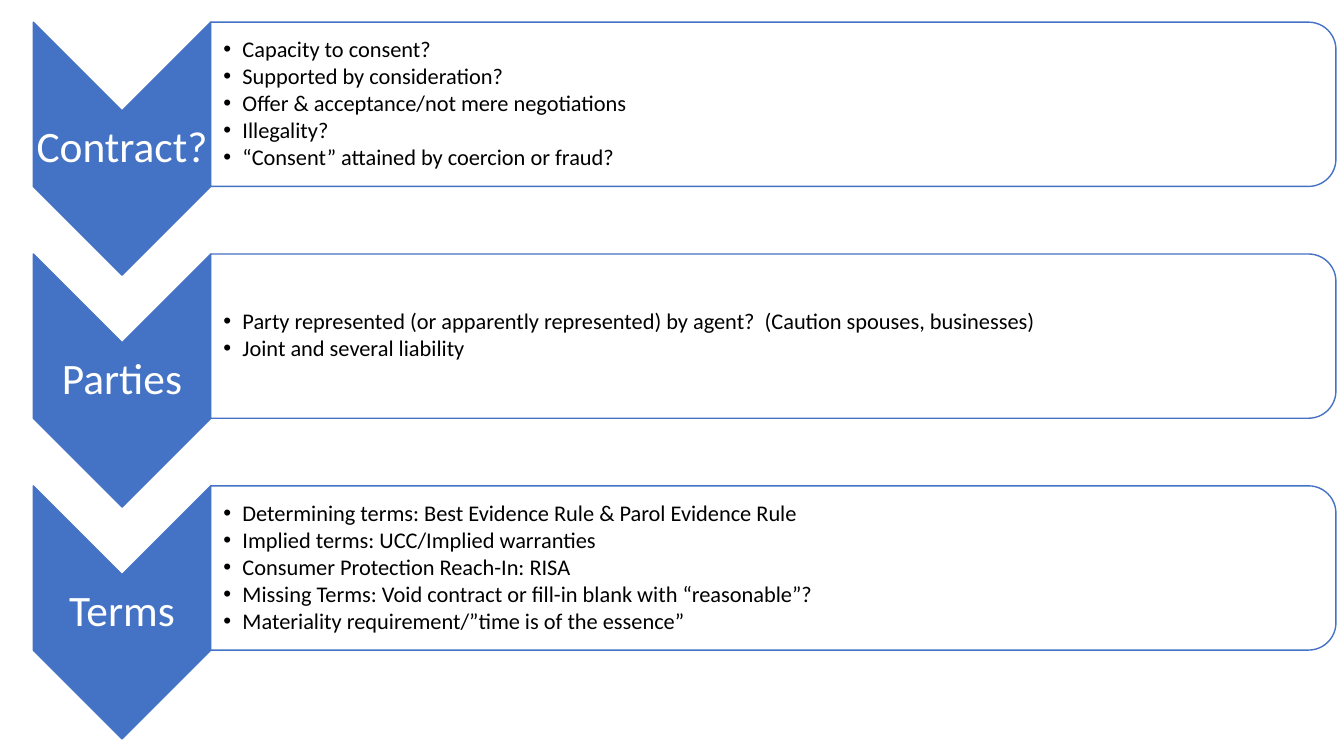
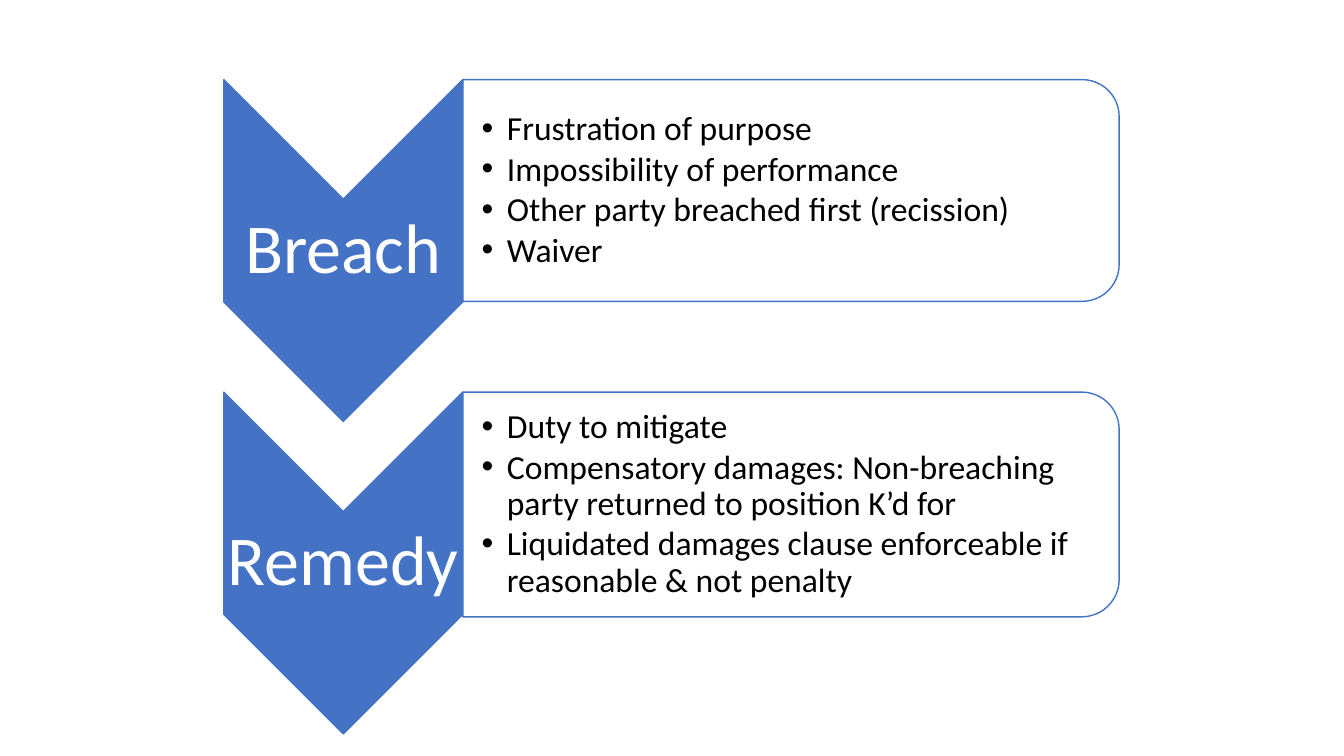
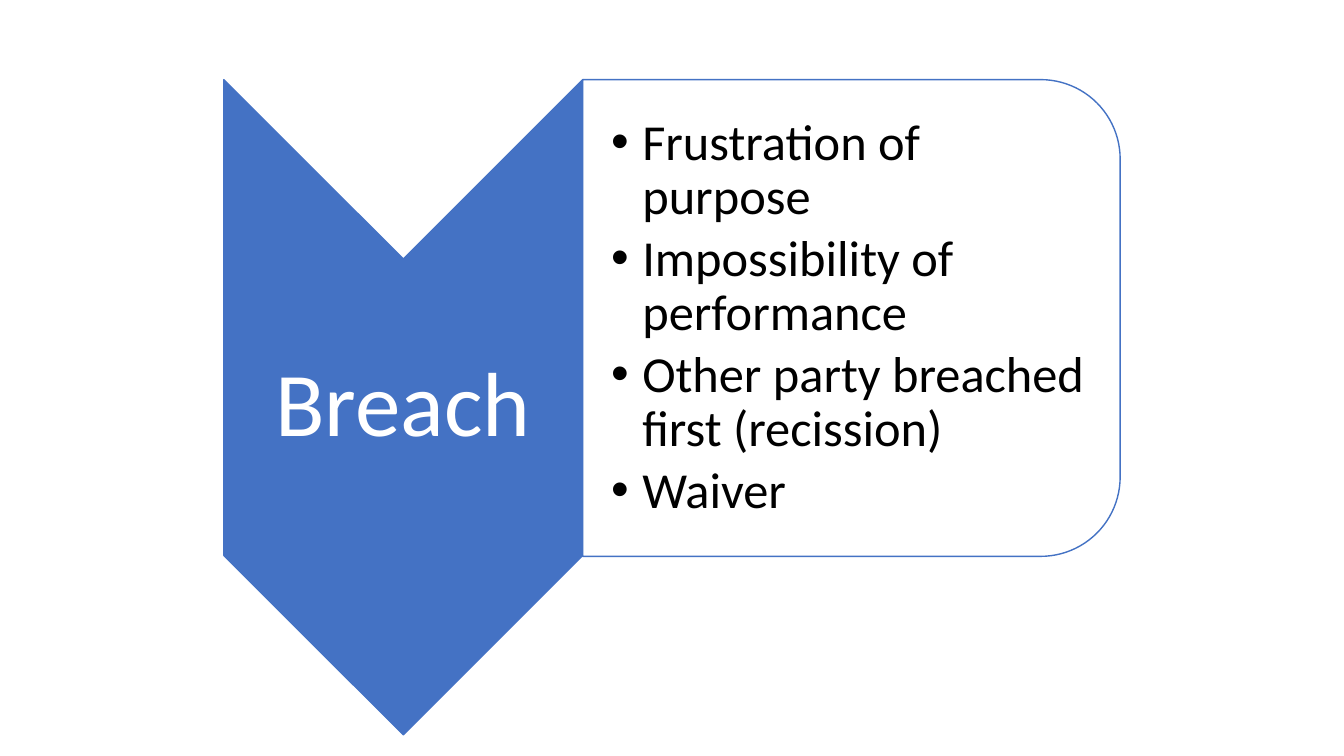
from dataclasses import dataclass

from lxml import etree
from pptx import Presentation
from pptx import util as u
from pptx.dml.color import RGBColor
from pptx.enum import shapes, text
from pptx.oxml.ns import qn

PX = 9144  # EMU in one px, 100 px to the inch


# Theme
@dataclass(frozen=True)
class Theme:
    font: str = "Calibri"
    accent: str = "4472C4"
    panel: str = "FFFFFF"
    panel_alpha: int = 90
    label: str = "FFFFFF"
    body: str = "000000"
    line: float = 1
    leading: float = 0.9
    para_gap: float = 0.13  # share of the type size


THEME = Theme()


# Content model
@dataclass(frozen=True)
class Box:
    left: float
    top: float
    width: float
    height: float


@dataclass(frozen=True)
class Step:
    label: str
    points: tuple[str, ...]
    panel_height: int


@dataclass(frozen=True)
class ChevronList:
    layout: int  # template layout with enough body placeholders
    chevron: Box  # the first chevron
    pitch: int
    panel_width: int
    label_size: int
    list_size: int
    indent: int
    steps: tuple[Step, ...]


BREACH = ("Frustration of purpose", "Impossibility of performance",
          "Other party breached first (recission)", "Waiver")

SLIDES = (
    ChevronList(4, Box(33, 22, 176, 251), 230, 1116, 31, 16, 19, (
        Step("Contract?", (
            "Capacity to consent?",
            "Supported by consideration?",
            "Offer & acceptance/not mere negotiations",
            "Illegality?",
            "“Consent” attained by coercion or fraud?"), 163),
        Step("Parties", (
            "Party represented (or apparently represented) by agent?  "
            "(Caution spouses, businesses)",
            "Joint and several liability"), 163),
        Step("Terms", (
            "Determining terms: Best Evidence Rule & Parol Evidence Rule",
            "Implied terms: UCC/Implied warranties",
            "Consumer Protection Reach-In: RISA",
            "Missing Terms: Void contract or fill-in blank with “reasonable”?",
            "Materiality requirement/”time is of the essence”"), 163))),
    ChevronList(3, Box(222, 79, 237, 339), 310, 651, 50, 24, 25, (
        Step("Breach", BREACH, 220),
        Step("Remedy", (
            "Duty to mitigate",
            "Compensatory damages: Non-breaching party returned to position K’d for",
            "Liquidated damages clause enforceable if reasonable & not penalty"), 223))),
    ChevronList(1, Box(222, 79, 356, 650), 0, 533, 65, 36, 31, (
        Step("Breach", BREACH, 473),)),
)


# Drawing helpers
def px(n: float) -> u.Emu:
    return u.Emu(round(n * PX))


def place(sp, box: Box) -> None:
    sp.left, sp.top = px(box.left), px(box.top)
    sp.width, sp.height = px(box.width), px(box.height)


def add_turned(slide, kind, box: Box, fill: str, alpha: int = 100) -> None:
    """Draw a preset shape turned by 90 degrees so that it covers the box."""
    shift = (box.width - box.height) / 2
    sp = slide.shapes.add_shape(kind, 0, 0, 0, 0)
    place(sp, Box(box.left + shift, box.top - shift, box.height, box.width))
    sp.rotation = 90
    sp.shadow.inherit = False
    sp.fill.solid()
    sp.fill.fore_color.rgb = RGBColor.from_string(fill)
    sp.line.color.rgb = RGBColor.from_string(THEME.accent)
    sp.line.width = u.Pt(THEME.line)
    if alpha < 100:
        color = sp.element.spPr.find(qn("a:solidFill"))[0]
        etree.SubElement(color, qn("a:alpha"), val=str(alpha * 1000))


def write(sp, lines: tuple[str, ...], *, size: int, color: str, align,
          inset: int, left_inset: float, indent: int = 0) -> None:
    """Fill a shape with formatted paragraphs, bulleted where indented."""
    tf = sp.text_frame
    tf.word_wrap = True
    tf.auto_size = text.MSO_AUTO_SIZE.NONE
    tf.vertical_anchor = text.MSO_ANCHOR.MIDDLE
    tf.margin_left = px(left_inset)
    tf.margin_top = tf.margin_right = tf.margin_bottom = px(inset)
    for i, line in enumerate(lines):
        p = tf.paragraphs[0] if i == 0 else tf.add_paragraph()
        p.alignment = align
        p.line_spacing = THEME.leading
        p.space_before = u.Pt(0)
        p.space_after = u.Pt(round(size * THEME.para_gap))
        r = p.add_run()
        r.text = line
        r.font.name, r.font.size, r.font.bold = THEME.font, u.Pt(size), False
        r.font.color.rgb = RGBColor.from_string(color)
        if indent:
            pPr = p._p.get_or_add_pPr()
            pPr.set("marL", str(px(indent)))
            pPr.set("indent", str(-px(indent)))
            etree.SubElement(pPr, qn("a:buFont"), typeface="Arial")
            etree.SubElement(pPr, qn("a:buChar"), char="•")


def draw_step(slide, body, spec_: ChevronList, step: Step, top: int) -> None:
    first = spec_.chevron
    chevron = Box(first.left, top, first.width, first.height)
    panel = Box(first.left + first.width, top, spec_.panel_width, step.panel_height)
    add_turned(slide, shapes.MSO_SHAPE.CHEVRON, chevron, THEME.accent)
    add_turned(slide, shapes.MSO_SHAPE.ROUND_2_SAME_RECTANGLE, panel,
               THEME.panel, THEME.panel_alpha)

    # Label between the notch and the tip
    label = slide.shapes.add_textbox(0, 0, 0, 0)
    place(label, Box(chevron.left, top + chevron.width / 2,
                     chevron.width, chevron.height - chevron.width))
    inset = spec_.label_size // 15
    write(label, (step.label,), size=spec_.label_size, color=THEME.label,
          align=text.PP_ALIGN.CENTER, inset=inset, left_inset=inset)

    # List kept clear of the rounded corners, in front of the panel
    clear = panel.height / 6 * 0.29
    place(body, Box(panel.left, top + clear,
                    panel.width - clear, panel.height - 2 * clear))
    slide.shapes.element.append(body.element)
    write(body, step.points, size=spec_.list_size, color=THEME.body,
          align=text.PP_ALIGN.LEFT, inset=spec_.list_size // 12,
          left_inset=spec_.list_size * 0.78, indent=spec_.indent)


def draw_slide(prs, chevrons: ChevronList) -> None:
    slide = prs.slides.add_slide(prs.slide_layouts[chevrons.layout])
    title, *bodies = list(slide.placeholders)
    for i, (step, body) in enumerate(zip(chevrons.steps, bodies)):
        draw_step(slide, body, chevrons, step, chevrons.chevron.top + i * chevrons.pitch)
    for sp in (title, *bodies[len(chevrons.steps):]):
        sp.element.getparent().remove(sp.element)


def main() -> None:
    prs = Presentation()
    prs.slide_width, prs.slide_height = px(1333), px(750)
    for chevrons in SLIDES:
        draw_slide(prs, chevrons)
    prs.save("out.pptx")


if __name__ == "__main__":
    main()
